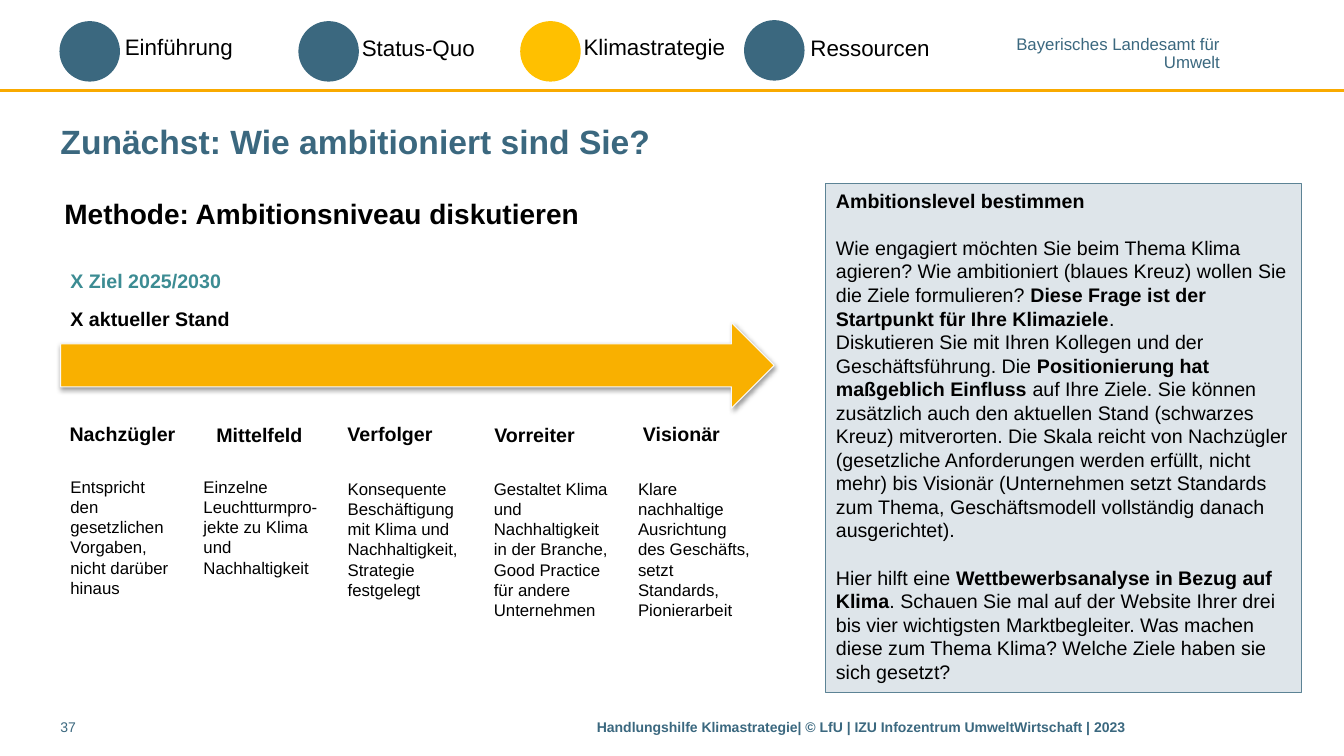
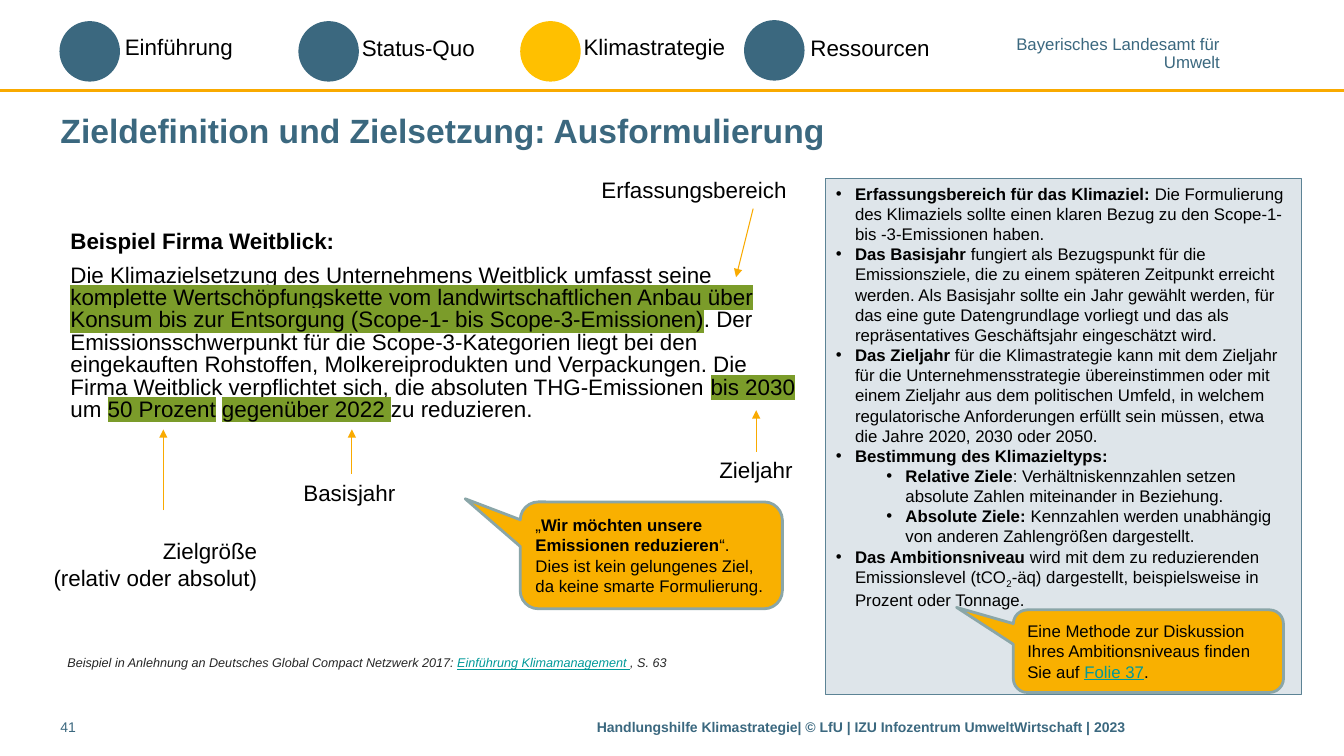
"""Build two slides on setting climate targets."""
from lxml.etree import SubElement as Sub
from pptx import Presentation as Pres
from pptx.dml.color import RGBColor as Rgb
from pptx.enum.shapes import MSO_CONNECTOR as Conn, MSO_SHAPE as Form
from pptx.enum.text import MSO_ANCHOR as Anchor, MSO_AUTO_SIZE as Fit, PP_ALIGN as Align
from pptx.oxml.ns import qn
from pptx.util import Inches, Pt

BLUE, BLACK, GOLD, AMBER = "3B687F", "000000", "F9B000", "F9AA00"
SUN, TEAL, LINK, GREEN = "FFC000", "3C8C93", "009999", "7B9C2A"
PANEL, EDGE, RIM, PALE, GREY = "DEE5EA", "5C8395", "8AA6A8", "F9F9F9", "262626"

BOLD = {"bold": True}
URL = {"color": LINK, "underline": True}
MARK = {"mark": GREEN}
FLAT = {"margin_left": 0, "margin_right": 0}
MID = {"vertical_anchor": Anchor.MIDDLE}
RIGHT = {"alignment": Align.RIGHT}
HEAD = {"size": 14, "bold": True}

TABS = [(0.59, 0.21, BLUE, 1.14, 0.28, "Einführung"),
        (2.96, 0.21, BLUE, 3.49, 0.29, "Status-Quo"),
        (5.16, 0.21, SUN, 5.69, 0.28, "Klimastrategie"),
        (7.38, 0.20, BLUE, 7.94, 0.29, "Ressourcen")]

LEVELS = [
    (1.84, 4.14, "Nachzügler", 0.6, 4.68, 1.23,
     "Entspricht den gesetzlichen Vorgaben, nicht darüber hinaus"),
    (3.1, 4.15, "Mittelfeld", 1.92, 4.68, 1.36,
     "Einzelne Leuchtturmpro-jekte zu Klima und Nachhaltigkeit"),
    (4.39, 4.14, "Verfolger", 3.35, 4.7, 1.36,
     "Konsequente Beschäftigung mit Klima und Nachhaltigkeit, Strategie festgelegt"),
    (5.8, 4.15, "Vorreiter", 4.8, 4.7, 1.36,
     "Gestaltet Klima und Nachhaltigkeit in der Branche, Good Practice für andere Unternehmen"),
    (7.24, 4.14, "Visionär", 6.23, 4.7, 1.36,
     "Klare nachhaltige Ausrichtung des Geschäfts, setzt Standards, Pionierarbeit")]

GAP = {"space_before": Pt(17)}
SCALE = [
    ([("Ambitionslevel bestimmen", BOLD)], {}),
    (["Wie engagiert möchten Sie beim Thema Klima agieren? Wie ambitioniert (blaues Kreuz) "
      "wollen Sie die Ziele formulieren? ",
      ("Diese Frage ist der Startpunkt für Ihre Klimaziele", BOLD), "."], GAP),
    (["Diskutieren Sie mit Ihren Kollegen und der Geschäftsführung. Die ",
      ("Positionierung hat maßgeblich Einfluss ", BOLD),
      "auf Ihre Ziele. Sie können zusätzlich auch den aktuellen Stand (schwarzes Kreuz) "
      "mitverorten. Die Skala reicht von Nachzügler (gesetzliche Anforderungen werden erfüllt, "
      "nicht mehr) bis Visionär (Unternehmen setzt Standards zum Thema, Geschäftsmodell "
      "vollständig danach ausgerichtet)."], {}),
    (["Hier hilft eine ", ("Wettbewerbsanalyse in Bezug auf Klima", BOLD),
      ". Schauen Sie mal auf der Website Ihrer drei bis vier wichtigsten Marktbegleiter. "
      "Was machen diese zum Thema Klima? Welche Ziele haben sie sich gesetzt?"], GAP)]

DOT, SUB = {"bullet": 0.19}, {"bullet": 0.69, "level": 1}
TERMS = [
    ([("Erfassungsbereich für das Klimaziel: ", BOLD),
      "Die Formulierung des Klimaziels sollte einen klaren Bezug zu den Scope-1- bis "
      "-3-Emissionen haben."], DOT),
    ([("Das Basisjahr ", BOLD),
      "fungiert als Bezugspunkt für die Emissionsziele, die zu einem späteren Zeitpunkt "
      "erreicht werden. Als Basisjahr sollte ein Jahr gewählt werden, für das eine gute "
      "Datengrundlage vorliegt und das als repräsentatives Geschäftsjahr eingeschätzt wird."],
     DOT),
    ([("Das Zieljahr ", BOLD),
      "für die Klimastrategie kann mit dem Zieljahr für die Unternehmensstrategie "
      "übereinstimmen oder mit einem Zieljahr aus dem politischen Umfeld, in welchem "
      "regulatorische Anforderungen erfüllt sein müssen, etwa die Jahre 2020, 2030 oder 2050."],
     DOT),
    ([("Bestimmung des Klimazieltyps:", BOLD)], DOT),
    ([("Relative Ziele", BOLD),
      ": Verhältniskennzahlen setzen absolute Zahlen miteinander in Beziehung."], SUB),
    ([("Absolute Ziele: ", BOLD),
      "Kennzahlen werden unabhängig von anderen Zahlengrößen dargestellt."], SUB),
    ([("Das Ambitionsniveau ", BOLD),
      "wird mit dem zu reduzierenden Emissionslevel (tCO", ("2", {"base": -25000}),
      "-äq) dargestellt, beispielsweise in Prozent oder Tonnage."], DOT)]

TIGHT = {"line_spacing": Pt(16)}
CASE = [
    ([("Beispiel Firma Weitblick:", BOLD)], TIGHT),
    (["Die Klimazielsetzung des Unternehmens Weitblick umfasst seine ",
      ("komplette Wertschöpfungskette vom landwirtschaftlichen Anbau über Konsum bis zur "
       "Entsorgung (Scope-1- bis Scope-3-Emissionen)", MARK),
      ". Der Emissionsschwerpunkt für die Scope-3-Kategorien liegt bei den eingekauften "
      "Rohstoffen, Molkereiprodukten und Verpackungen. Die Firma Weitblick verpflichtet sich, "
      "die absoluten THG-Emissionen ", ("bis 2030 ", MARK), "um ", ("50 Prozent", MARK), " ",
      ("gegenüber 2022 ", MARK), "zu reduzieren."], {**TIGHT, "space_before": Pt(8)})]

LABELS = [(7.9, 1.7, ["Erfassungsbereich"]), (7.96, 4.48, ["Zieljahr"]),
          (4.02, 4.7, ["Basisjahr"]), (2.65, 5.28, ["Zielgröße", "(relativ oder absolut)"])]
ARROWS = [(7.47, 2.07, 7.3, 2.75), (7.5, 4.48, 7.5, 4.07),
          (3.49, 4.7, 3.49, 4.26), (1.62, 5.06, 1.62, 4.26)]


def rgb(code):
    """Turn a hex string into a colour."""
    return Rgb.from_string(code)


def apply(item, vals):
    """Set each value of a dict as an attribute."""
    for key, val in vals.items():
        setattr(item, key, val)


class Deck:
    """Hold the style and the current slide."""

    base = {"size": 12, "color": BLACK, "name": "Arial"}

    def __init__(self):
        """Start an empty wide deck."""
        self.pres = Pres()
        self.pres.slide_width, self.pres.slide_height = Inches(13.33), Inches(7.5)

    def page(self, title, top, num):
        """Add a slide with its title, header and footer."""
        self.slide = self.pres.slides.add_slide(self.pres.slide_layouts[1])
        self.shapes = self.slide.shapes
        head = self.place(self.shapes.title, 0.6, top, 12.31, 0.55)
        self.set_text(head, [title], {"size": 24, "color": BLUE, "bold": True},
                      frame={**FLAT, **MID})
        self.line(0, 0.9, 13.33, 0.9, 2)
        self.text(9.6, 0.37, 2.5, 0.34, ["Bayerisches Landesamt für", "Umwelt"],
                  {"color": BLUE}, {**RIGHT, "line_spacing": 0.85},
                  {**FLAT, "margin_top": 0, "margin_bottom": 0})
        for left, y, fill, x, base, name in TABS:
            self.shape(Form.OVAL, left, y, 0.6, 0.6, fill)
            self.text(x, base, 2, 0.37, [name], {"size": 16})
        foot = {"size": 10, "color": BLUE}
        self.text(5.92, 7.08, 6.99, 0.31,
                  ["Handlungshilfe Klimastrategie| © LfU | IZU Infozentrum UmweltWirtschaft | 2023"],
                  {**foot, **BOLD}, frame=FLAT)
        self.text(0.6, 7.08, 0.7, 0.31, [num], foot, frame=FLAT)

    def place(self, item, *spot):
        """Move and size a shape."""
        apply(item, dict(zip(("left", "top", "width", "height"), map(Inches, spot))))
        return item

    def paint(self, item, fill, edge=None, width=1):
        """Give a shape its fill and line."""
        item.fill.solid()
        item.fill.fore_color.rgb = rgb(fill)
        if edge:
            item.line.color.rgb, item.line.width = rgb(edge), Pt(width)
        else:
            item.line.fill.background()
        return item

    def add_bit(self, para, text, form):
        """Add one run with its format."""
        bit = para.add_run()
        bit.text = text
        vals = {**self.base, **form}
        tone, mark, shift = vals.pop("color"), vals.pop("mark", None), vals.pop("base", None)
        vals["size"] = Pt(vals["size"])
        apply(bit.font, vals)
        bit.font.color.rgb = rgb(tone)
        props = bit._r.get_or_add_rPr()
        if mark:
            light = props.makeelement(qn("a:highlight"))
            Sub(light, qn("a:srgbClr"), val=mark)
            props.find(qn("a:solidFill")).addnext(light)
        if shift:
            props.set("baseline", str(shift))

    def set_text(self, item, paras, form=None, lay=None, frame=None):
        """Fill a text frame with paragraphs of runs."""
        body = item.text_frame
        apply(body, {"word_wrap": True, "auto_size": Fit.NONE,
                     "vertical_anchor": Anchor.TOP, **(frame or {})})
        for num, part in enumerate(paras):
            para = body.add_paragraph() if num else body.paragraphs[0]
            bits, own = part if isinstance(part, tuple) else ([part], {})
            own = {"alignment": Align.LEFT, "space_before": Pt(0), **(lay or {}), **own}
            dent = own.pop("bullet", None)
            apply(para, own)
            props = para._p.get_or_add_pPr()
            props.set("marL", str(Inches(dent or 0)))
            props.set("indent", str(Inches(-0.19 if dent else 0)))
            if dent:
                Sub(props, qn("a:buFont"), typeface="Arial")
                Sub(props, qn("a:buChar"), char="•")
            else:
                Sub(props, qn("a:buNone"))
            for bit in bits:
                text, more = bit if isinstance(bit, tuple) else (bit, {})
                self.add_bit(para, text, {**(form or {}), **more})

    def text(self, x, y, wide, high, paras, form=None, lay=None, frame=None):
        """Add a text box."""
        box = self.shapes.add_textbox(*map(Inches, (x, y, wide, high)))
        self.set_text(box, paras, form, lay, frame)

    def label(self, right, top, paras, form):
        """Add a label that ends at a right edge."""
        self.text(right - 2.4, top, 2.4, 0.37 * len(paras), paras, form, RIGHT)

    def panel(self, top, high, paras, size):
        """Turn the body placeholder into the side panel."""
        box = self.place(self.slide.placeholders[1], 8.19, top, 4.72, high)
        self.set_text(self.paint(box, PANEL, EDGE), paras, {"size": size})

    def shape(self, form, x, y, wide, high, *look):
        """Add a preset shape without a shadow."""
        item = self.shapes.add_shape(form, *map(Inches, (x, y, wide, high)))
        item.shadow.inherit = False
        return self.paint(item, *look)

    def scale(self, *spot):
        """Add the block arrow with its soft shadow."""
        item = self.shape(Form.RIGHT_ARROW, *spot, GOLD, PALE, 0.75)
        glow = item._element.spPr.find(qn("a:effectLst"))
        cast = Sub(glow, qn("a:outerShdw"), blurRad="40000", dist="20000",
                   dir="5400000", rotWithShape="0")
        Sub(Sub(cast, qn("a:srgbClr"), val=BLACK), qn("a:alpha"), val="38000")

    def bubble(self, x, y, wide, high, bits):
        """Add a speech bubble."""
        item = self.shape(Form.ROUNDED_RECTANGULAR_CALLOUT, x, y, wide, high, GOLD, RIM, 2)
        for num, val in enumerate((-0.71, -0.53, 0.17)):
            item.adjustments[num] = val
        self.set_text(item, [(bits, {})], frame=MID)

    def line(self, x, y, end, low, width=0.75, tip=False):
        """Add a line, with an arrowhead if asked."""
        item = self.shapes.add_connector(Conn.STRAIGHT, *map(Inches, (x, y, end, low)))
        item.line.color.rgb, item.line.width = rgb(AMBER), Pt(width)
        props = item._element.spPr
        if tip:
            Sub(props.find(qn("a:ln")), qn("a:tailEnd"), type="triangle")
        Sub(props, qn("a:effectLst"))


def level(deck):
    """Build the slide on the level of ambition."""
    deck.page("Zunächst: Wie ambitioniert sind Sie?", 1.12, "37")
    deck.panel(1.82, 5.05, SCALE, 14)
    deck.text(0.54, 1.9, 5.62, 0.44, ["Methode: Ambitionsniveau diskutieren"], {"size": 20, **BOLD})
    deck.text(0.6, 2.62, 2.99, 0.34, ["X Ziel 2025/2030"], {**HEAD, "color": TEAL})
    deck.text(0.6, 3, 6.68, 0.34, ["X aktueller Stand"], HEAD)
    deck.scale(0.6, 3.2, 7.08, 0.85)
    for right, top, name, x, y, wide, note in LEVELS:
        deck.label(right, top, [name], HEAD)
        deck.text(x, y, wide, 1.51, [note])


def target(deck):
    """Build the slide on wording a target."""
    deck.page("Zieldefinition und Zielsetzung: Ausformulierung", 1.02, "41")
    deck.panel(1.77, 5.12, TERMS, 12)
    deck.text(0.6, 2.25, 7.48, 2.05, CASE, {"size": 16})
    for right, top, paras in LABELS:
        deck.label(right, top, paras, {"size": 16})
    for spot in ARROWS:
        deck.line(*spot, tip=True)
    deck.bubble(5.16, 4.98, 2.6, 1.06, [
        "„", ("Wir möchten unsere Emissionen reduzieren", BOLD),
        "“. Dies ist kein gelungenes Ziel, da keine smarte Formulierung."])
    deck.bubble(10.05, 6.05, 2.68, 0.82, [
        "Eine Methode zur Diskussion Ihres Ambitionsniveaus finden Sie auf ",
        ("Folie 37", URL), "."])
    deck.text(0.57, 6.45, 6.25, 0.4, [([
        "Beispiel in Anlehnung an Deutsches Global Compact Netzwerk 2017: ",
        ("Einführung Klimamanagement ", URL), ", S. 63"], {})],
        {"size": 9, "color": GREY, "italic": True})


def main():
    """Build and save the deck."""
    deck = Deck()
    level(deck)
    target(deck)
    deck.pres.save("out.pptx")


if __name__ == "__main__":
    main()
